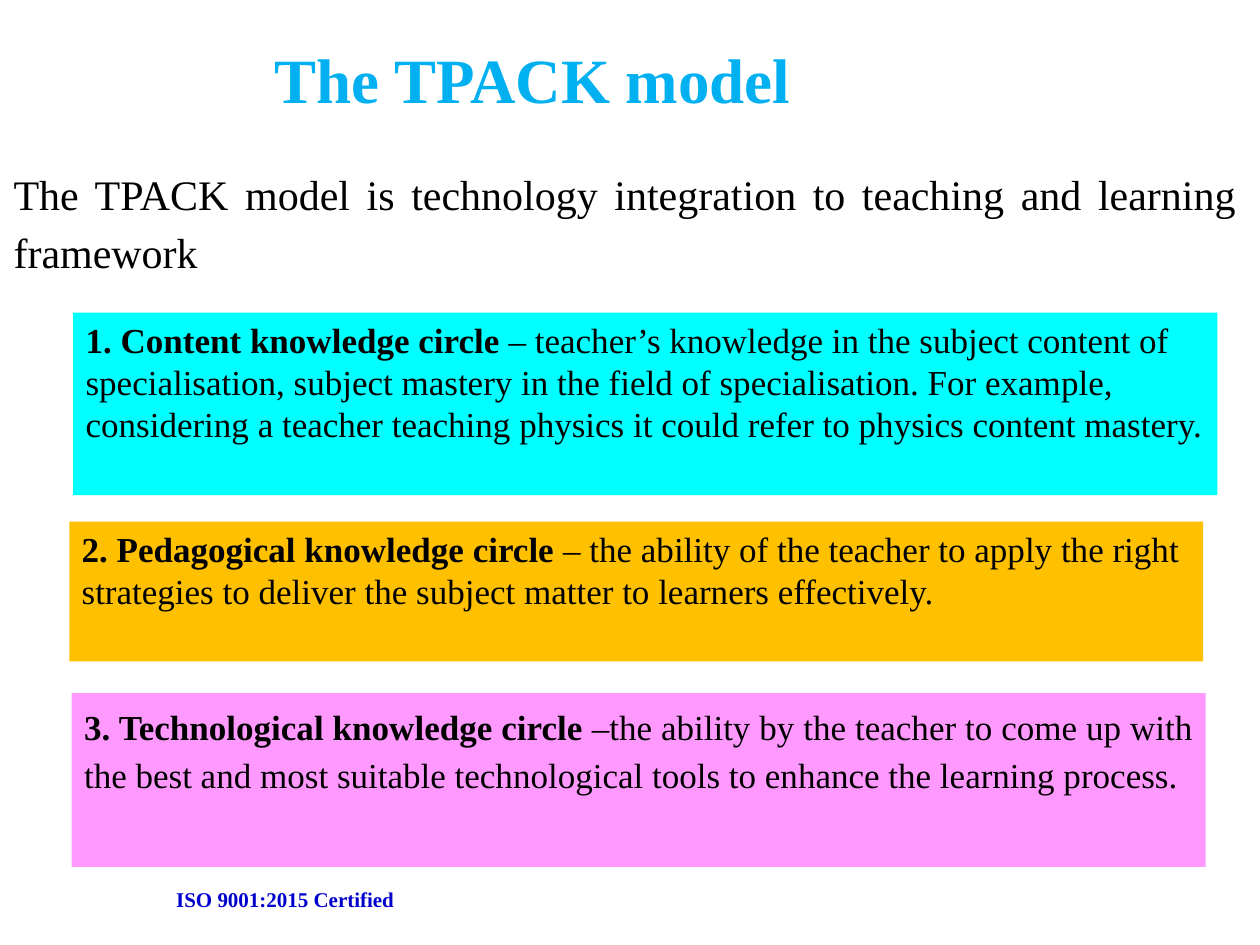
from pptx import Presentation
from pptx.dml.color import RGBColor as RGB
from pptx.enum.shapes import MSO_SHAPE as SHAPE
from pptx.enum.text import MSO_ANCHOR as ANCHOR, PP_ALIGN as ALIGN
from pptx.util import Pt

BLACK = RGB(0x00, 0x00, 0x00)
SKY = RGB(0x00, 0xB0, 0xF0)
NAVY = RGB(0x00, 0x00, 0xCC)
CYAN = RGB(0x00, 0xFF, 0xFF)
GOLD = RGB(0xFF, 0xC0, 0x00)
PINK = RGB(0xFF, 0x99, 0xFF)

deck = Presentation()
deck.slide_width, deck.slide_height = Pt(720), Pt(540)
slide = deck.slides.add_slide(deck.slide_layouts[6])


def add_text(text, left, top, width, height, size=20, color=BLACK, bold=False,
             lead="", fill=None, align=ALIGN.LEFT, anchor=ANCHOR.TOP,
             line=None, after=None):
    """Place text, with an optional bold lead and a filled box behind it."""
    area = Pt(left), Pt(top), Pt(width), Pt(height)
    if fill is None:
        box = slide.shapes.add_textbox(*area)
    else:
        box = slide.shapes.add_shape(SHAPE.RECTANGLE, *area)
        box.shadow.inherit = False
        box.fill.solid()
        box.fill.fore_color.rgb = fill
        box.line.fill.background()
    frame = box.text_frame
    frame.word_wrap = True
    frame.vertical_anchor = anchor
    para = frame.paragraphs[0]
    para.alignment = align
    para.line_spacing = line
    para.space_after = after
    for part, heavy in ((lead, True), (text, bold)):
        if part:
            run = para.add_run()
            run.text = part
            font = run.font
            font.name, font.size, font.bold = "Times New Roman", Pt(size), heavy
            font.color.rgb = color


# Footer, title and opening line
add_text("ISO 9001:2015 Certified", 93.6, 503.3, 373.7, 21.6,
         size=12, color=NAVY, bold=True)
add_text("The TPACK model ", 0, 0, 617.8, 90, size=36, color=SKY, bold=True,
         align=ALIGN.CENTER, anchor=ANCHOR.MIDDLE)
add_text("The TPACK model is technology integration to teaching and learning "
         "framework", 0.7, 88.6, 712.8, 139.7, size=24,
         align=ALIGN.JUSTIFY, line=1.15, after=Pt(12))

# The three knowledge circles
add_text(" – teacher’s knowledge in the subject content of specialisation, "
         "subject mastery in the field of specialisation. For example, "
         "considering a teacher teaching physics it could refer to physics "
         "content mastery.", 41.8, 178.6, 653.8, 104.4,
         lead="1. Content knowledge circle", fill=CYAN)
add_text(" – the ability of the teacher to apply the right strategies to "
         "deliver the subject matter to learners effectively.",
         39.6, 298.1, 648, 79.9,
         lead="2. Pedagogical knowledge circle", fill=GOLD)
add_text(" –the ability by the teacher to come up with the best and most "
         "suitable technological tools to enhance the learning process.",
         41, 396, 648, 99.4,
         lead="3. Technological knowledge circle", fill=PINK,
         align=ALIGN.JUSTIFY, line=1.15, after=Pt(12))

deck.save("out.pptx")
